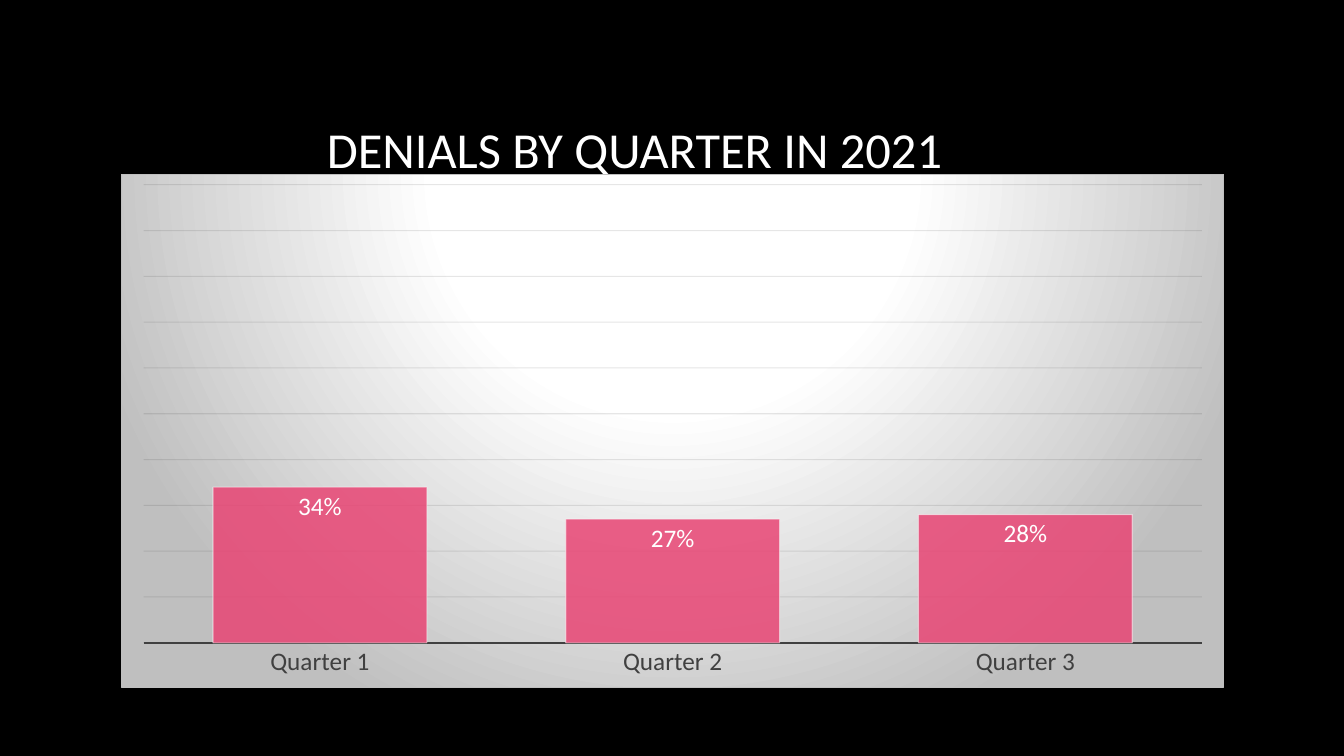
from lxml.etree import SubElement
from pptx import Presentation
from pptx.chart.data import CategoryChartData
from pptx.dml.color import RGBColor
from pptx.enum.chart import XL_CHART_TYPE as ChartType
from pptx.enum.chart import XL_LABEL_POSITION as LabelPosition
from pptx.enum.chart import XL_TICK_MARK as TickMark
from pptx.enum.text import MSO_ANCHOR as Anchor
from pptx.enum.text import PP_ALIGN as Align
from pptx.oxml import parse_xml
from pptx.oxml.ns import nsdecls, qn
from pptx.util import Emu, Inches, Pt

EMU_PER_PX = 914400 / 100.8
TITLE_ONLY = 5


def px(length):
    return Emu(round(length * EMU_PER_PX))


def rgb(value):
    return RGBColor.from_string(value)


def set_opacity(fill_parent, percent):
    """Set the opacity of the solid fill directly inside an element."""
    color = fill_parent.find(qn("a:solidFill")).find(qn("a:srgbClr"))
    SubElement(color, qn("a:alpha")).set("val", str(percent * 1000))


class DenialsSlide:
    font = "Calibri"
    white, black = "FFFFFF", "000000"
    pink, label_gray, border_gray = "E84574", "404040", "BFBFBF"
    grid_color = "0D0D0D"
    glow_stops = ((0, white), (39, white), (100, border_gray))

    def __init__(self, presentation):
        layout = presentation.slide_layouts[TITLE_ONLY]
        self.slide = presentation.slides.add_slide(layout)
        background = self.slide.background.fill
        background.solid()
        background.fore_color.rgb = rgb(self.black)

    def style_font(self, font, size, color):
        font.name, font.size, font.bold = self.font, Pt(size), False
        font.color.rgb = rgb(color)

    def style_line(self, line, color, width):
        line.color.rgb = rgb(color)
        line.width = Pt(width)

    def title(self, text, left, top, width, height):
        heading = self.slide.shapes.title
        heading.left, heading.top = px(left), px(top)
        heading.width, heading.height = px(width), px(height)
        frame = heading.text_frame
        frame.vertical_anchor = Anchor.MIDDLE
        paragraph = frame.paragraphs[0]
        paragraph.alignment = Align.CENTER
        run = paragraph.add_run()
        run.text = text
        self.style_font(run.font, 36, self.white)

    def column_chart(self, rates, left, top, width, height):
        data = CategoryChartData(number_format="0%")
        data.categories = list(rates)
        data.add_series("Series 1", list(rates.values()))
        chart = self.slide.shapes.add_chart(
            ChartType.COLUMN_CLUSTERED,
            px(left), px(top), px(width), px(height), data).chart
        chart.has_title = chart.has_legend = False
        self.style_font(chart.font, 10, self.white)
        self.chart_area(chart)
        self.axes(chart)
        self.columns(chart)

    def chart_area(self, chart):
        # Radial glow centred above the chart
        stops = "".join(
            f'<a:gs pos="{position * 1000}"><a:srgbClr val="{color}"/></a:gs>'
            for position, color in self.glow_stops)
        area = parse_xml(
            f'<c:spPr {nsdecls("c", "a")}>'
            f'<a:gradFill><a:gsLst>{stops}</a:gsLst><a:path path="circle">'
            '<a:fillToRect l="50000" t="-80000" r="50000" b="180000"/>'
            '</a:path></a:gradFill>'
            f'<a:ln w="{Pt(0.75)}"><a:solidFill>'
            f'<a:srgbClr val="{self.border_gray}"/></a:solidFill></a:ln>'
            '</c:spPr>')
        chart.element.find(qn("c:chart")).addnext(area)

    def axes(self, chart):
        quarters = chart.category_axis
        quarters.major_tick_mark = quarters.minor_tick_mark = TickMark.NONE
        self.style_font(quarters.tick_labels.font, 18, self.label_gray)
        self.style_line(quarters.format.line, self.label_gray, 1.5)

        share = chart.value_axis
        share.minimum_scale, share.maximum_scale = 0, 1
        share.major_unit = 0.1
        share.visible = False
        share.has_major_gridlines = True
        self.style_line(share.major_gridlines.format.line, self.grid_color, 0.75)
        grid = chart.element.find(f".//{qn('c:majorGridlines')}/{qn('c:spPr')}")
        set_opacity(grid.find(qn("a:ln")), 10)

    def columns(self, chart):
        plot = chart.plots[0]
        plot.gap_width = 65
        plot.vary_by_categories = False
        denials = plot.series[0]
        denials.format.fill.solid()
        denials.format.fill.fore_color.rgb = rgb(self.pink)
        self.style_line(denials.format.line, self.white, 0.75)
        look = chart.element.find(f".//{qn('c:ser')}/{qn('c:spPr')}")
        set_opacity(look, 85)
        set_opacity(look.find(qn("a:ln")), 50)

        labels = denials.data_labels
        labels.show_value = True
        labels.position = LabelPosition.INSIDE_END
        labels.number_format, labels.number_format_is_linked = "0%", False
        self.style_font(labels.font, 18, self.white)


def main():
    presentation = Presentation()
    presentation.slide_width = Inches(13.33)
    presentation.slide_height = Inches(7.5)
    slide = DenialsSlide(presentation)

    # Heading
    slide.title("DENIALS BY QUARTER IN 2021", 76, 68, 1117, 160)

    # Denial rate per quarter
    rates = {"Quarter 1": 0.34, "Quarter 2": 0.27, "Quarter 3": 0.28}
    slide.column_chart(rates, 121, 174, 1103, 514)

    presentation.save("out.pptx")


if __name__ == "__main__":
    main()
